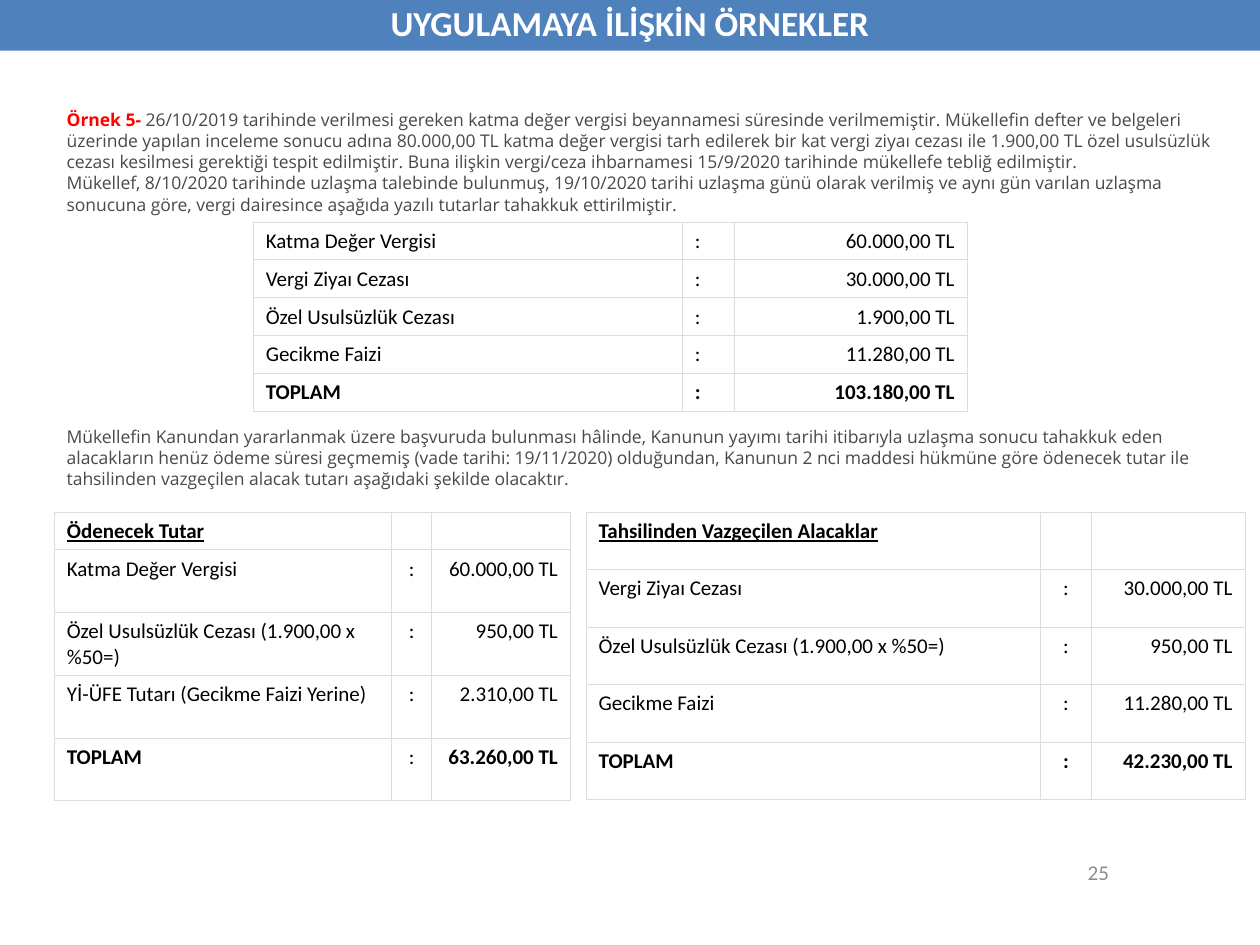
from dataclasses import dataclass

from lxml import etree
from pptx import Presentation
from pptx.dml.color import RGBColor
from pptx.enum.text import MSO_ANCHOR, MSO_AUTO_SIZE, PP_ALIGN
from pptx.oxml.ns import qn
from pptx.util import Pt

LEFT, CENTER, RIGHT = PP_ALIGN.LEFT, PP_ALIGN.CENTER, PP_ALIGN.RIGHT
TOP, MIDDLE = MSO_ANCHOR.TOP, MSO_ANCHOR.MIDDLE
GROW, FIXED = MSO_AUTO_SIZE.SHAPE_TO_FIT_TEXT, MSO_AUTO_SIZE.NONE
TITLE_ONLY = 5

COLORS = {
    "band": "4F81BD",
    "white": "FFFFFF",
    "black": "000000",
    "body": "494949",
    "accent": "FF0000",
    "number": "8C8C8C",
    "border": "DDDDDD",
}
BODY = {"name": "Open Sans", "size": Pt(10), "bold": False, "color": "body"}
LEAD = {**BODY, "bold": True, "color": "accent"}
CELL = {"name": "Calibri", "size": Pt(12), "bold": False, "color": "black"}
TOTAL = {**CELL, "bold": True}
HEADING = {**TOTAL, "underline": True}
TITLE = {"name": "Calibri", "size": Pt(20), "bold": True, "color": "white"}
NUMBER = {**CELL, "color": "number"}


@dataclass
class TextBlock:
    """Paragraphs are lists of (text, format) runs."""
    box: tuple
    paragraphs: list
    alignment: PP_ALIGN = LEFT
    anchor: MSO_ANCHOR = TOP
    auto_size: MSO_AUTO_SIZE = GROW


@dataclass
class AmountTable:
    left: float
    top: float
    widths: list
    heights: list
    amounts: list
    total: str
    heading: str = ""
    colon_alignment: PP_ALIGN = CENTER
    bold_total_colon: bool = True


def rgb(name: str) -> RGBColor:
    return RGBColor.from_string(COLORS[name])


def add_run(paragraph, text: str, style: dict) -> None:
    run = paragraph.add_run()
    run.text = text
    for attribute, value in style.items():
        if attribute == "color":
            run.font.color.rgb = rgb(value)
        else:
            setattr(run.font, attribute, value)


def fill_frame(frame, block: TextBlock) -> None:
    settings = {"word_wrap": True, "auto_size": block.auto_size,
                "vertical_anchor": block.anchor}
    for attribute, value in settings.items():
        setattr(frame, attribute, value)
    for index, runs in enumerate(block.paragraphs):
        paragraph = frame.add_paragraph() if index else frame.paragraphs[0]
        paragraph.alignment = block.alignment
        for text, style in runs:
            add_run(paragraph, text, style)


def add_text(slide, block: TextBlock) -> None:
    shape = slide.shapes.add_textbox(*map(Pt, block.box))
    fill_frame(shape.text_frame, block)


def add_title(slide, text: str) -> None:
    box = (0, 0, 720, 29)
    shape = slide.shapes.title
    shape.left, shape.top, shape.width, shape.height = map(Pt, box)
    shape.fill.solid()
    shape.fill.fore_color.rgb = rgb("band")
    fill_frame(shape.text_frame,
               TextBlock(box, [[(text, TITLE)]], CENTER, TOP, FIXED))
    shape.text_frame.paragraphs[0].line_spacing = 0.9


def set_borders(cell) -> None:
    properties = cell._tc.get_or_add_tcPr()
    for index, side in enumerate(("a:lnL", "a:lnR", "a:lnT", "a:lnB")):
        line = etree.Element(qn(side), w=str(Pt(0.6)))
        fill = etree.SubElement(line, qn("a:solidFill"))
        etree.SubElement(fill, qn("a:srgbClr"), val=COLORS["border"])
        properties.insert(index, line)


def format_cell(cell, text: str, style: dict, alignment: PP_ALIGN) -> None:
    cell.fill.solid()
    cell.fill.fore_color.rgb = rgb("white")
    set_borders(cell)
    paragraph = cell.text_frame.paragraphs[0]
    paragraph.alignment = alignment
    if text:
        add_run(paragraph, text, style)
    else:  # keeps an empty cell from stretching its row
        etree.SubElement(paragraph._p, qn("a:endParaRPr"), sz="1200")


def add_amount_table(slide, data: AmountTable) -> None:
    # Each row is label, colon, amount with one style per cell
    rows = [((label, ":", amount), (CELL,) * 3) for label, amount in data.amounts]
    if data.heading:
        rows.insert(0, ((data.heading, "", ""), (HEADING,) * 3))
    colon_style = TOTAL if data.bold_total_colon else CELL
    rows.append((("TOPLAM", ":", data.total), (TOTAL, colon_style, TOTAL)))

    frame = slide.shapes.add_table(
        len(rows), len(data.widths), Pt(data.left), Pt(data.top),
        Pt(sum(data.widths)), Pt(sum(data.heights)))
    table = frame.table
    table.first_row = table.horz_banding = False
    for column, width in zip(table.columns, data.widths):
        column.width = Pt(width)
    alignments = (LEFT, data.colon_alignment, RIGHT)
    for row, height, (texts, styles) in zip(table.rows, data.heights, rows):
        row.height = Pt(height)
        for cell, text, style, alignment in zip(row.cells, texts, styles, alignments):
            format_cell(cell, text, style, alignment)


TEXT_BLOCKS = [
    TextBlock((31, 59, 680.4, 67.7), [
        [("Örnek 5-\u00a0", LEAD),
         ("26/10/2019 tarihinde verilmesi gereken katma değer vergisi beyannamesi "
          "süresinde verilmemiştir. Mükellefin defter ve belgeleri üzerinde yapılan "
          "inceleme sonucu adına 80.000,00 TL katma değer vergisi tarh edilerek bir kat "
          "vergi ziyaı cezası ile 1.900,00 TL özel usulsüzlük cezası kesilmesi gerektiği "
          "tespit edilmiştir. Buna ilişkin vergi/ceza ihbarnamesi 15/9/2020 tarihinde "
          "mükellefe tebliğ edilmiştir.", BODY)],
        [("Mükellef, 8/10/2020 tarihinde uzlaşma talebinde bulunmuş, 19/10/2020 tarihi "
          "uzlaşma günü olarak verilmiş ve aynı gün varılan uzlaşma sonucuna göre, vergi "
          "dairesince aşağıda yazılı tutarlar tahakkuk ettirilmiştir.", BODY)]]),
    TextBlock((31, 239.8, 680.4, 43.9), [
        [("Mükellefin Kanundan yararlanmak üzere başvuruda bulunması hâlinde, Kanunun "
          "yayımı tarihi itibarıyla uzlaşma sonucu tahakkuk eden alacakların henüz ödeme "
          "süresi geçmemiş (vade tarihi: 19/11/2020) olduğundan, Kanunun 2 nci maddesi "
          "hükmüne göre ödenecek tutar ile tahsilinden vazgeçilen alacak tutarı "
          "aşağıdaki şekilde olacaktır.", BODY)]]),
    TextBlock((473, 483.8, 167.8, 28.8), [[("25", NUMBER)]], RIGHT, MIDDLE, FIXED),
]

HALF_PENALTY = ("Özel Usulsüzlük Cezası (1.900,00 x %50=)", "950,00 TL")
AMOUNT_TABLES = [
    AmountTable(144.7, 126.9, [245.2, 29.8, 133], [21.6] * 5, [
        ("Katma Değer Vergisi", "60.000,00 TL"),
        ("Vergi Ziyaı Cezası", "30.000,00 TL"),
        ("Özel Usulsüzlük Cezası", "1.900,00 TL"),
        ("Gecikme Faizi", "11.280,00 TL"),
    ], "103.180,00 TL", colon_alignment=LEFT),
    AmountTable(31, 292.6, [192.8, 22.8, 79.4], [21.6] + [35.8] * 4, [
        ("Katma Değer Vergisi", "60.000,00 TL"),
        HALF_PENALTY,
        ("Yİ-ÜFE Tutarı (Gecikme Faizi Yerine)", "2.310,00 TL"),
    ], "63.260,00 TL", "Ödenecek Tutar", bold_total_colon=False),
    AmountTable(334.9, 292.6, [259.6, 29.2, 87.8], [32.9] * 5, [
        ("Vergi Ziyaı Cezası", "30.000,00 TL"),
        HALF_PENALTY,
        ("Gecikme Faizi", "11.280,00 TL"),
    ], "42.230,00 TL", "Tahsilinden Vazgeçilen Alacaklar"),
]


def main() -> None:
    presentation = Presentation()
    presentation.slide_width, presentation.slide_height = Pt(720), Pt(540)
    slide = presentation.slides.add_slide(presentation.slide_layouts[TITLE_ONLY])

    # Title band
    add_title(slide, "UYGULAMAYA İLİŞKİN ÖRNEKLER")
    # Example text and page number
    for block in TEXT_BLOCKS:
        add_text(slide, block)
    # Assessed, payable and waived amounts
    for data in AMOUNT_TABLES:
        add_amount_table(slide, data)

    presentation.save("out.pptx")


if __name__ == "__main__":
    main()
